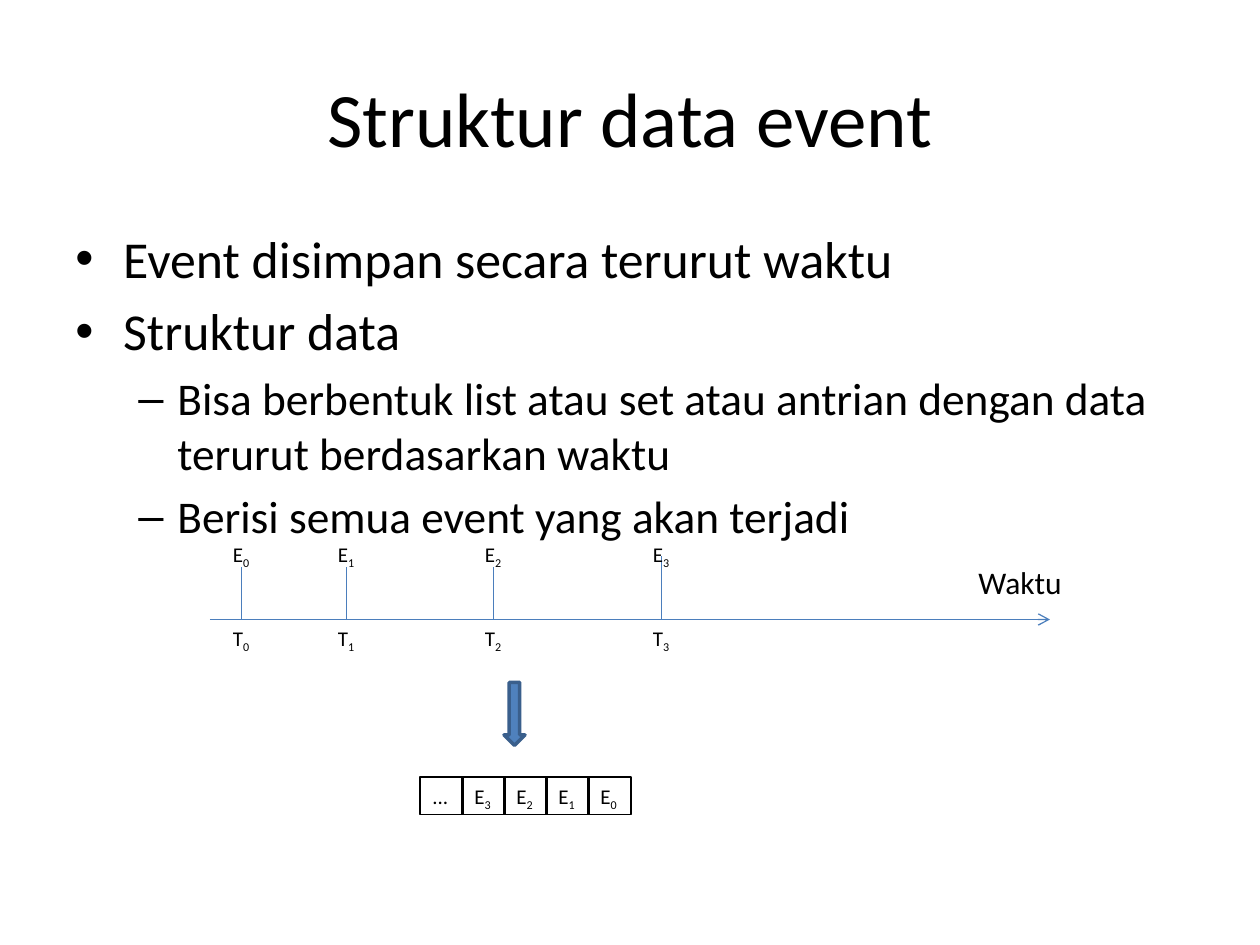
from dataclasses import dataclass
from typing import NamedTuple

from lxml import etree
from pptx import Presentation
from pptx.dml.color import RGBColor
from pptx.enum.shapes import MSO_CONNECTOR, MSO_SHAPE
from pptx.enum.text import MSO_ANCHOR, MSO_AUTO_SIZE, PP_ALIGN
from pptx.oxml.ns import qn
from pptx.util import Inches, Pt

STRAIGHT = MSO_CONNECTOR.STRAIGHT
RECTANGLE, DOWN_ARROW = MSO_SHAPE.RECTANGLE, MSO_SHAPE.DOWN_ARROW
TOP, MIDDLE = MSO_ANCHOR.TOP, MSO_ANCHOR.MIDDLE
LEFT, CENTER = PP_ALIGN.LEFT, PP_ALIGN.CENTER
FIT_SHAPE = MSO_AUTO_SIZE.SHAPE_TO_FIT_TEXT


@dataclass(frozen=True)
class Theme:
    font: str = "Calibri"
    text: RGBColor = RGBColor(0x00, 0x00, 0x00)
    axis: RGBColor = RGBColor(0x4B, 0x7E, 0xBC)
    arrow_fill: RGBColor = RGBColor(0x4F, 0x81, 0xBD)
    arrow_line: RGBColor = RGBColor(0x3A, 0x5F, 0x8C)
    title_size: float = 44
    axis_size: float = 18
    label_size: float = 12
    thin: float = 0.75
    thick: float = 2


class Level(NamedTuple):
    mark: str
    size: float
    margin: float
    hanging: float


class Bullet(NamedTuple):
    level: int
    text: str


class Event(NamedTuple):
    index: str
    column: int
    tick_top: int


THEME = Theme()
WIDTH, HEIGHT = Inches(10), Inches(7.5)
COLUMNS, ROWS = 120, 90

LEVELS = [Level("•", 29.6, 0.38, 0.38), Level("–", 25.9, 0.81, 0.31)]
BULLETS = [
    Bullet(0, "Event disimpan secara terurut waktu"),
    Bullet(0, "Struktur data"),
    Bullet(1, "Bisa berbentuk list atau set atau antrian dengan data "
              "terurut berdasarkan waktu"),
    Bullet(1, "Berisi semua event yang akan terjadi"),
]
EVENTS = [Event("0", 23, 54), Event("1", 33, 54), Event("2", 47, 54), Event("3", 63, 53)]
AXIS_ROW, AXIS_START, AXIS_END = 59, 20, 100
EVENT_ROW = 51
LABEL_WIDTH, LABEL_HEIGHT = 4.1, 3.6
QUEUE_COLUMN, QUEUE_ROW, QUEUE_STEP = 40, 74, 4


def across(columns: float) -> int:
    return round(WIDTH * columns / COLUMNS)


def down(rows: float) -> int:
    return round(HEIGHT * rows / ROWS)


def box(column: float, row: float, columns: float, rows: float) -> tuple[int, ...]:
    return across(column), down(row), across(columns), down(rows)


def add_run(paragraph, text: str, size: float, subscript: bool = False) -> None:
    run = paragraph.add_run()
    run.text = text
    run.font.name = THEME.font
    run.font.size = Pt(size)
    run.font.color.rgb = THEME.text
    if subscript:
        run.font._element.set("baseline", "-25000")


def write_label(shape, text: str, size: float, index: str = "") -> None:
    frame = shape.text_frame
    frame.word_wrap = False
    frame.auto_size = FIT_SHAPE
    frame.vertical_anchor = TOP
    paragraph = frame.paragraphs[0]
    paragraph.alignment = LEFT
    add_run(paragraph, text, size)
    if index:
        add_run(paragraph, index, size, subscript=True)


def add_line(shapes, start: tuple[float, float], end: tuple[float, float],
             arrow: bool = False) -> None:
    connector = shapes.add_connector(
        STRAIGHT, across(start[0]), down(start[1]), across(end[0]), down(end[1]))
    connector.line.color.rgb = THEME.axis
    connector.line.width = Pt(THEME.thin)
    if arrow:
        etree.SubElement(connector.line._get_or_add_ln(), qn("a:tailEnd"), type="arrow")
    etree.SubElement(connector._element.spPr, qn("a:effectLst"))


def add_title(shapes, text: str) -> None:
    frame = shapes.add_textbox(*box(6, 3.6, 108, 15)).text_frame
    frame.word_wrap = True
    frame.vertical_anchor = MIDDLE
    frame.paragraphs[0].alignment = CENTER
    add_run(frame.paragraphs[0], text, THEME.title_size)


def add_bullets(shapes, bullets: list[Bullet]) -> None:
    frame = shapes.add_textbox(*box(6, 21, 108, 30)).text_frame
    frame.word_wrap = True
    for number, bullet in enumerate(bullets):
        paragraph = frame.add_paragraph() if number else frame.paragraphs[0]
        level = LEVELS[bullet.level]
        paragraph.level = bullet.level
        paragraph.space_before = Pt(level.size * 0.2)
        properties = paragraph._p.get_or_add_pPr()
        properties.set("marL", str(Inches(level.margin)))
        properties.set("indent", str(-Inches(level.hanging)))
        etree.SubElement(properties, qn("a:buFont"), typeface="Arial")
        etree.SubElement(properties, qn("a:buChar"), char=level.mark)
        add_run(paragraph, bullet.text, level.size)


def add_timeline(shapes, events: list[Event]) -> None:
    add_line(shapes, (AXIS_START, AXIS_ROW), (AXIS_END, AXIS_ROW), arrow=True)
    for event in events:
        add_line(shapes, (event.column, AXIS_ROW), (event.column, event.tick_top))
        for letter, row in (("E", EVENT_ROW), ("T", AXIS_ROW)):
            label = shapes.add_textbox(
                *box(event.column - 2, row, LABEL_WIDTH, LABEL_HEIGHT))
            write_label(label, letter, THEME.label_size, event.index)
    write_label(shapes.add_textbox(*box(92, 53, 10.4, 4.8)), "Waktu", THEME.axis_size)


def add_queue(shapes, events: list[Event]) -> None:
    cells = [("...", "")] + [("E", event.index) for event in reversed(events)]
    group = shapes.add_group_shape()
    for number, (text, index) in enumerate(cells):
        column = QUEUE_COLUMN + number * QUEUE_STEP
        cell = group.shapes.add_shape(
            RECTANGLE, *box(column, QUEUE_ROW, LABEL_WIDTH, LABEL_HEIGHT))
        cell.shadow.inherit = False
        cell.fill.background()
        cell.line.color.rgb = THEME.text
        cell.line.width = Pt(THEME.thin)
        write_label(cell, text, THEME.label_size, index)


def add_down_arrow(shapes) -> None:
    arrow = shapes.add_shape(DOWN_ARROW, *box(48, 65, 2, 6))
    arrow.shadow.inherit = False
    arrow.fill.solid()
    arrow.fill.fore_color.rgb = THEME.arrow_fill
    arrow.line.color.rgb = THEME.arrow_line
    arrow.line.width = Pt(THEME.thick)


def main() -> None:
    presentation = Presentation()
    presentation.slide_width, presentation.slide_height = WIDTH, HEIGHT
    slide = presentation.slides.add_slide(presentation.slide_layouts[6])
    shapes = slide.shapes

    # Heading and bullet points
    add_title(shapes, "Struktur data event")
    add_bullets(shapes, BULLETS)

    # Events along the time axis, then the ordered queue they form
    add_timeline(shapes, EVENTS)
    add_queue(shapes, EVENTS)
    add_down_arrow(shapes)

    presentation.save("out.pptx")


if __name__ == "__main__":
    main()
